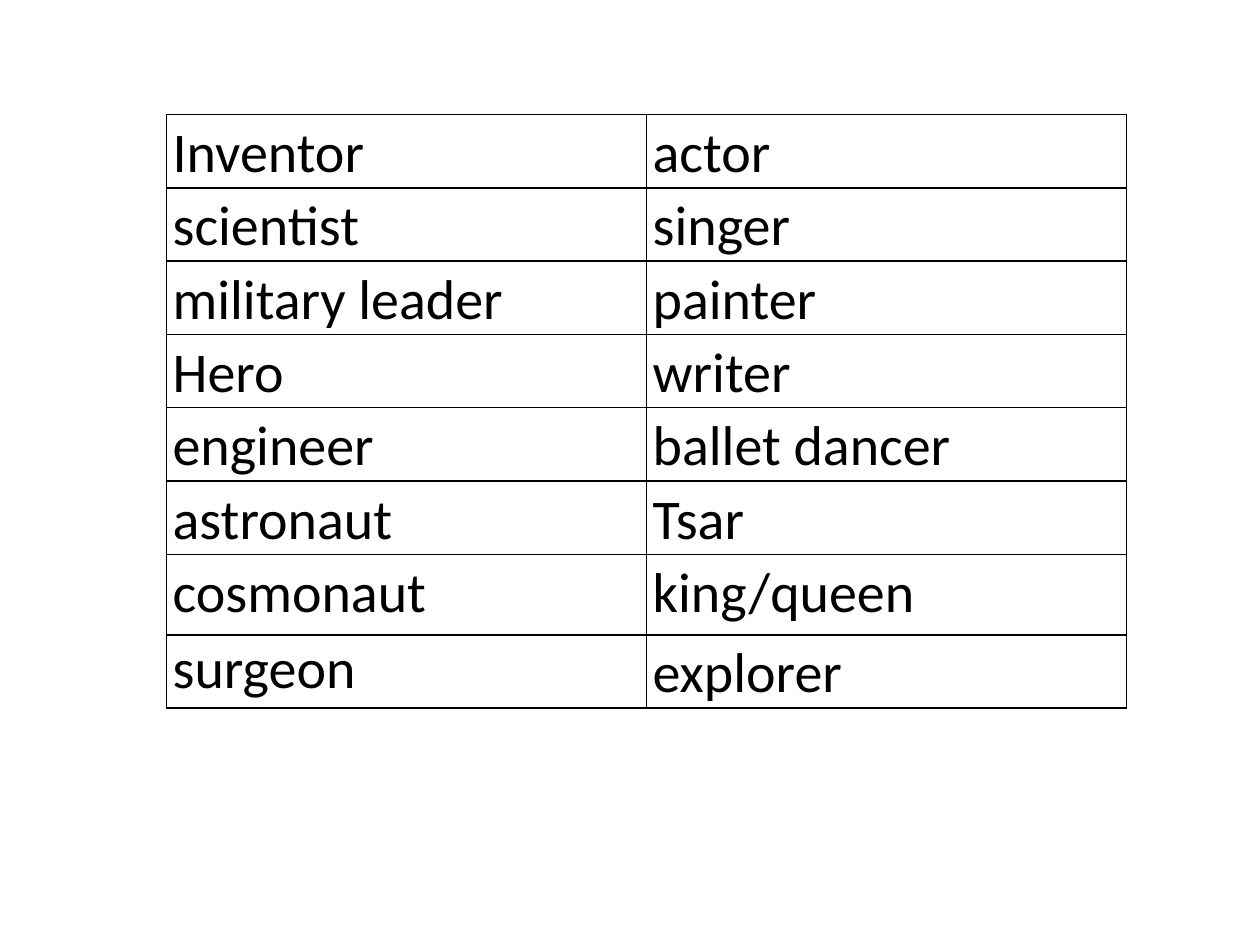
from lxml.etree import SubElement
from pptx import Presentation
from pptx.dml.color import RGBColor
from pptx.oxml.ns import qn
from pptx.util import Inches, Pt

COLORS = {"ink": "000000"}
PROFESSIONS = [
    ("Inventor", "actor"),
    ("scientist", "singer"),
    ("military leader", "painter"),
    ("Hero", "writer"),
    ("engineer", "ballet dancer"),
    ("astronaut", "Tsar"),
    ("cosmonaut", "king/queen"),
    ("surgeon", "explorer"),
]
ROW_HEIGHT = 0.58
ROW_HEIGHTS = {"cosmonaut": 0.64}
LINE_SPACING = 1.07
LINE_SPACINGS = {"surgeon": 1.0}


class SlideBuilder:
    """Hold the table style and the current slide."""

    def __init__(self, slide, font="Calibri", size=32, border=1):
        """Store the slide and its style."""
        self.slide = slide
        self.font = font
        self.size = size
        self.border = border

    def add_borders(self, cell):
        """Draw a solid line on each side of a cell."""
        properties = cell._tc.get_or_add_tcPr()
        for side in ("lnL", "lnR", "lnT", "lnB"):
            line = SubElement(properties, qn(f"a:{side}"), w=str(Pt(self.border)))
            fill = SubElement(line, qn("a:solidFill"))
            SubElement(fill, qn("a:srgbClr"), val=COLORS["ink"])

    def fill_cell(self, cell, text):
        """Style a cell and write its text."""
        self.add_borders(cell)
        cell.fill.background()
        cell.margin_left = cell.margin_right = Inches(0.05)
        cell.margin_top = cell.margin_bottom = Inches(0)
        paragraph = cell.text_frame.paragraphs[0]
        paragraph.line_spacing = LINE_SPACINGS.get(text, LINE_SPACING)
        run = paragraph.add_run()
        run.text = text
        run.font.name = self.font
        run.font.size = Pt(self.size)
        run.font.color.rgb = RGBColor.from_string(COLORS["ink"])

    def add_table(self, left, top, column_width, rows):
        """Add a bordered table with equal columns."""
        heights = [ROW_HEIGHTS.get(row[0], ROW_HEIGHT) for row in rows]
        columns = len(rows[0])
        table = self.slide.shapes.add_table(
            len(rows), columns, Inches(left), Inches(top),
            Inches(column_width * columns), Inches(sum(heights)),
        ).table
        table.first_row = False
        table.horz_banding = False
        for column in table.columns:
            column.width = Inches(column_width)
        for table_row, height, texts in zip(table.rows, heights, rows):
            table_row.height = Inches(height)
            for cell, text in zip(table_row.cells, texts):
                self.fill_cell(cell, text)


def main():
    """Build and save the professions slide."""
    presentation = Presentation()
    presentation.slide_width = Inches(10)
    presentation.slide_height = Inches(7.5)
    slide = presentation.slides.add_slide(presentation.slide_layouts[6])
    SlideBuilder(slide).add_table(1.32, 0.91, 3.81, PROFESSIONS)
    presentation.save("out.pptx")


if __name__ == "__main__":
    main()
